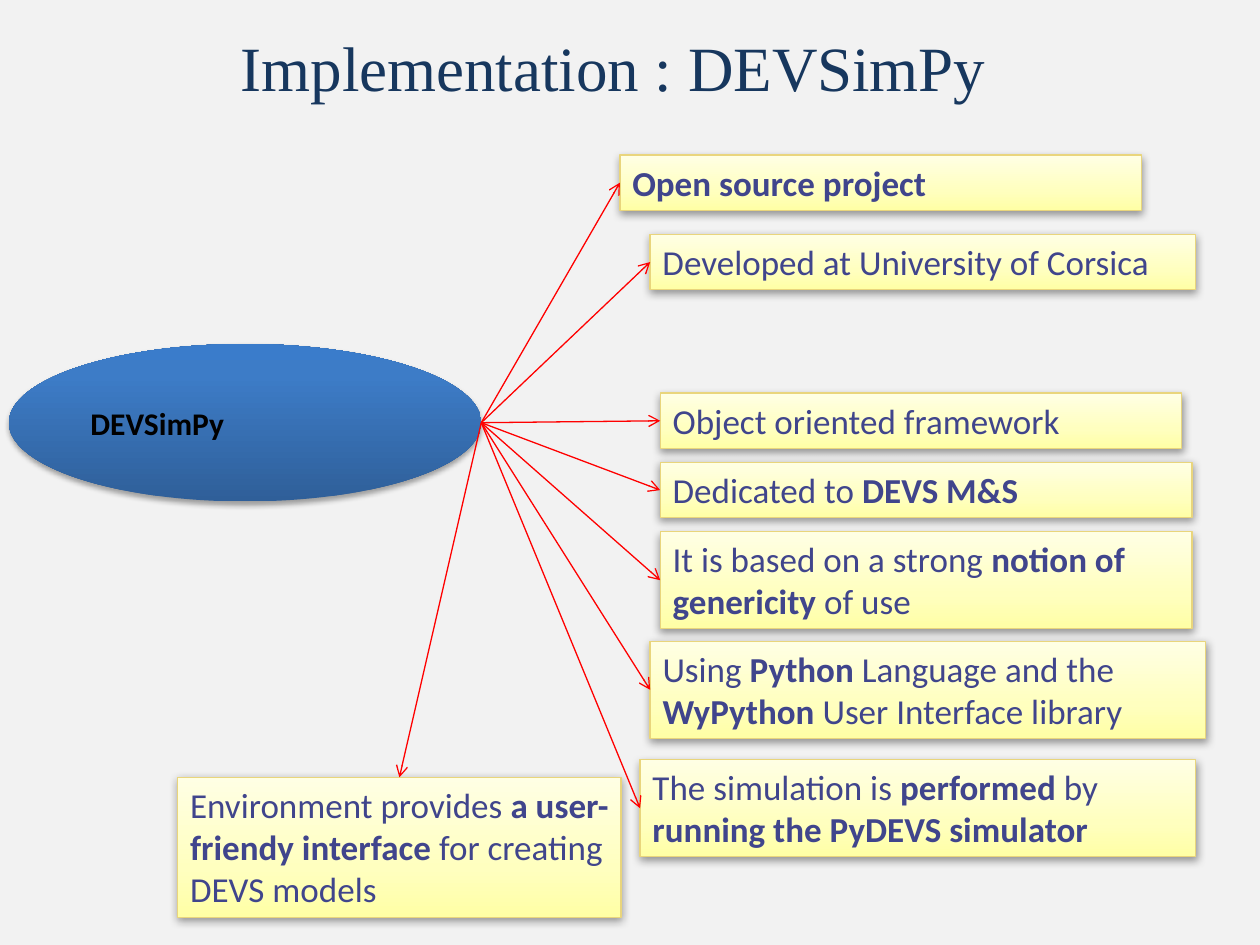
from lxml.etree import SubElement
from pptx import Presentation
from pptx.dml.color import RGBColor
from pptx.enum.shapes import MSO_CONNECTOR, MSO_SHAPE
from pptx.enum.text import MSO_ANCHOR, MSO_AUTO_SIZE, PP_ALIGN
from pptx.oxml.ns import qn
from pptx.util import Inches, Pt

COLORS = {
    "background": "F2F2F2",
    "title": "17375E",
    "note_text": "40458C",
    "note_line": "E9D57C",
    "hub_text": "000000",
    "arrow": "FF0000",
    "shadow": "000000",
}
# Gradient stops as (percent, colour), from bottom to top
NOTE_GRADIENT = [(0, "FFFFA5"), (35, "FFFFBF"), (100, "FFFFE4")]
HUB_GRADIENT = [(0, "2F5F99"), (80, "3D7CC7"), (100, "3A7CCB")]

# Each note: left, top, width, height, runs as (text, bold)
SIDE_NOTES = [
    (4.92, 1.23, 4.14, 0.44, [("Open source project", True)]),
    (5.16, 1.86, 4.33, 0.44, [("Developed at University of Corsica", False)]),
    (5.24, 3.12, 4.14, 0.44, [("Object oriented framework", False)]),
    (5.24, 3.67, 4.22, 0.44, [("Dedicated to ", False), ("DEVS M&S", True)]),
    (5.24, 4.22, 4.22, 0.77, [("It is based on a strong ", False),
                              ("notion of genericity ", True), ("of use", False)]),
    (5.16, 5.09, 4.41, 0.77, [("Using ", False), ("Python ", True),
                              ("Language and the ", False), ("WyPython", True),
                              (" User Interface library", False)]),
    (5.08, 6.03, 4.41, 0.77, [("The simulation is ", False), ("performed", True),
                              (" by ", False), ("running the PyDEVS simulator", True)]),
]
BOTTOM_NOTE = (1.41, 6.17, 3.52, 1.11, [("Environment provides ", False),
                                        ("a user-friendy interface", True),
                                        (" for creating DEVS models", False)])
HUB = (0.07, 2.73, 3.75, 1.25)


def rgb(name):
    return RGBColor.from_string(COLORS[name])


class SlideBuilder:
    def __init__(self, slide):
        self.s = slide
        fill = slide.background.fill
        fill.solid()
        fill.fore_color.rgb = rgb("background")

    def add_runs(self, p, runs, size, color, font="Calibri"):
        for text, bold in runs:
            r = p.add_run()
            r.text = text
            r.font.name = font
            r.font.size = Pt(size)
            r.font.bold = bold
            r.font.color.rgb = rgb(color)

    def title(self, text):
        sp = self.s.shapes.add_textbox(Inches(0.75), Inches(-0.25), Inches(8.5), Inches(1.25))
        tf = sp.text_frame
        tf.word_wrap = True
        tf.vertical_anchor = MSO_ANCHOR.MIDDLE
        tf.margin_right = Inches(0.36)
        p = tf.paragraphs[0]
        p.alignment = PP_ALIGN.CENTER
        p.line_spacing = 1.5
        self.add_runs(p, [(text, False)], 36, "title", "Times New Roman")

    def gradient(self, sp, stops):
        sp.fill.gradient()
        sp.fill.gradient_angle = 90
        gs_list = sp._element.spPr.find(qn("a:gradFill")).find(qn("a:gsLst"))
        for gs in list(gs_list):
            gs_list.remove(gs)
        for pos, color in stops:
            gs = SubElement(gs_list, qn("a:gs"), pos=str(pos * 1000))
            SubElement(gs, qn("a:srgbClr"), val=color)

    def shadow(self, sp, alpha, blur, dist):
        sp.shadow.inherit = False
        effects = sp._element.spPr.find(qn("a:effectLst"))
        outer = SubElement(effects, qn("a:outerShdw"), blurRad=str(Pt(blur)),
                           dist=str(Pt(dist)), dir="5400000", rotWithShape="0")
        clr = SubElement(outer, qn("a:srgbClr"), val=COLORS["shadow"])
        SubElement(clr, qn("a:alpha"), val=str(alpha * 1000))

    def shape(self, kind, box, stops):
        sp = self.s.shapes.add_shape(kind, *map(Inches, box))
        self.gradient(sp, stops)
        sp.text_frame.word_wrap = True
        sp.text_frame.paragraphs[0].alignment = PP_ALIGN.LEFT
        return sp

    def note(self, left, top, width, height, runs):
        sp = self.shape(MSO_SHAPE.RECTANGLE, (left, top, width, height), NOTE_GRADIENT)
        sp.line.color.rgb = rgb("note_line")
        sp.line.width = Pt(0.75)
        self.shadow(sp, 38, 5, 1.6)
        tf = sp.text_frame
        tf.vertical_anchor = MSO_ANCHOR.TOP
        tf.auto_size = MSO_AUTO_SIZE.SHAPE_TO_FIT_TEXT
        self.add_runs(tf.paragraphs[0], runs, 20, "note_text")

    def hub(self, box, text):
        sp = self.shape(MSO_SHAPE.OVAL, box, HUB_GRADIENT)
        sp.line.fill.background()
        self.shadow(sp, 35, 3.1, 1.8)
        sp.text_frame.vertical_anchor = MSO_ANCHOR.MIDDLE
        self.add_runs(sp.text_frame.paragraphs[0], [(text, True)], 18, "hub_text")

    def arrow(self, start, end):
        cn = self.s.shapes.add_connector(MSO_CONNECTOR.STRAIGHT, *map(Inches, start + end))
        cn.line.color.rgb = rgb("arrow")
        cn.line.width = Pt(0.75)
        sp_pr = cn._element.spPr
        SubElement(sp_pr.find(qn("a:ln")), qn("a:tailEnd"), type="arrow")
        SubElement(sp_pr, qn("a:effectLst"))


def main():
    prs = Presentation()
    prs.slide_width, prs.slide_height = Inches(10), Inches(7.5)
    builder = SlideBuilder(prs.slides.add_slide(prs.slide_layouts[6]))

    builder.title("Implementation : DEVSimPy")

    # Central ellipse and the notes around it
    builder.hub(HUB, "DEVSimPy")
    for note in SIDE_NOTES + [BOTTOM_NOTE]:
        builder.note(*note)

    # Arrows from the ellipse's right end to each note
    left, top, width, height = HUB
    start = (left + width, top + height / 2)
    for left, top, width, height, _ in SIDE_NOTES:
        builder.arrow(start, (left, top + height / 2))
    left, top, width, height, _ = BOTTOM_NOTE
    builder.arrow(start, (left + width / 2, top))

    prs.save("out.pptx")


if __name__ == "__main__":
    main()
